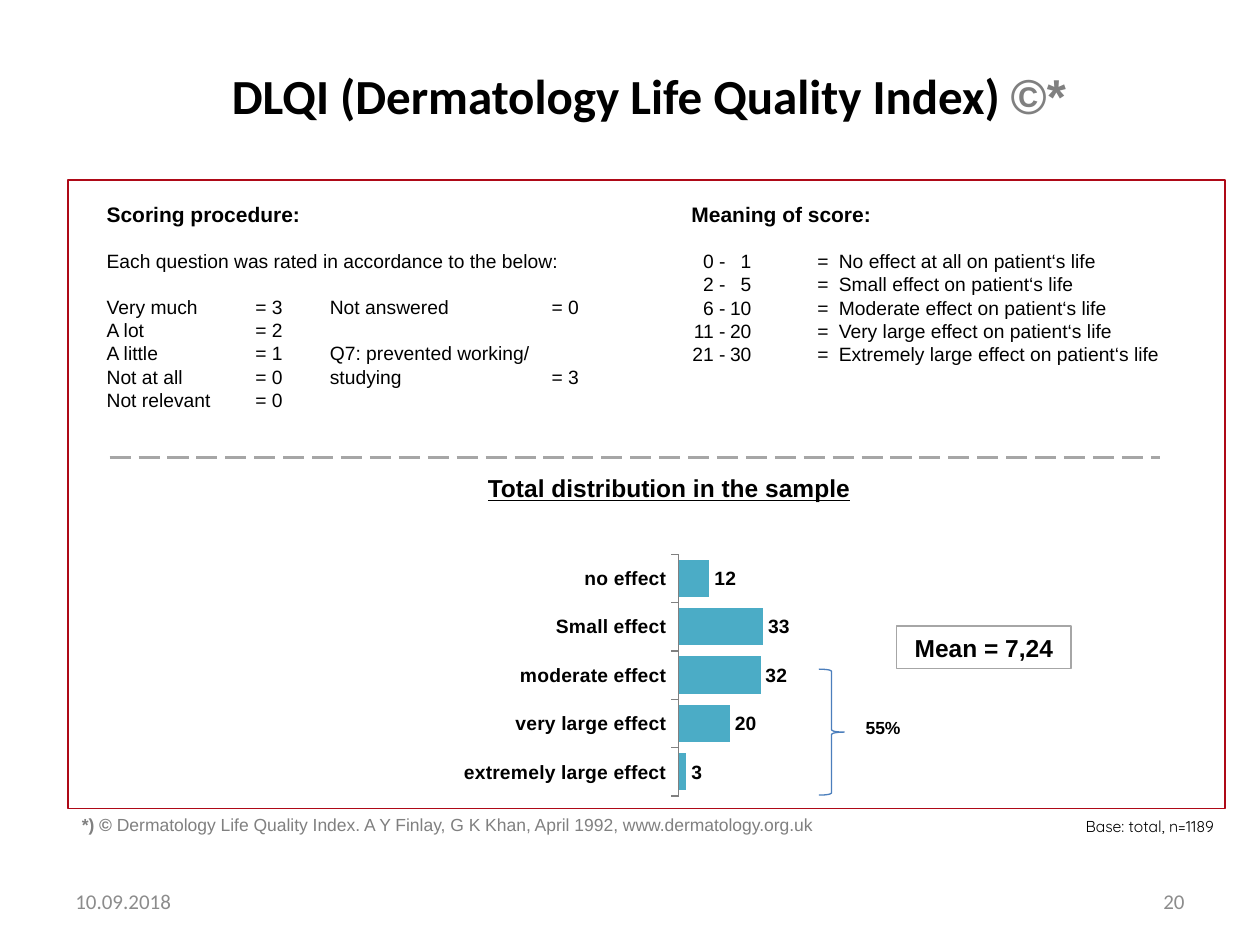
import pptx
import pptx.chart.data
import pptx.dml.color
import pptx.enum.chart
import pptx.enum.dml
import pptx.enum.shapes
import pptx.enum.text
import pptx.oxml
import pptx.oxml.ns
import pptx.util

Cm, Pt = pptx.util.Cm, pptx.util.Pt
Align = pptx.enum.text.PP_ALIGN
Shape = pptx.enum.shapes.MSO_SHAPE
INK = {"black": "000000", "grey": "808080", "pale": "8C8C8C", "rule": "A6A6A6",
       "red": "AE0917", "teal": "4BACC6", "blue": "4B7EBC"}
GAP = 13

RATES = ["Very much\t= 3\tNot answered\t= 0", "A lot\t= 2",
         "A little\t= 1\tQ7: prevented working/",
         "Not at all\t= 0\tstudying\t= 3", "Not relevant\t= 0"]
RATE_TABS = [(3, "l"), (4.5, "l"), (8.97, "l")]
SCORES = [(0, 1, "No effect at all"), (2, 5, "Small effect"),
          (6, 10, "Moderate effect"), (11, 20, "Very large effect"),
          (21, 30, "Extremely large effect")]
SCORE_TABS = [(0.69, "r"), (1.21, "r"), (2.54, "l"), (2.97, "l")]
SHARES = {"no effect": 12, "Small effect": 33, "moderate effect": 32,
          "very large effect": 20, "extremely large effect": 3}


def rgb(name):
    return pptx.dml.color.RGBColor.from_string(INK[name])


def style(font, size, color="black", bold=False, face="Arial"):
    font.name, font.size, font.bold = face, Pt(size), bold
    font.color.rgb = rgb(color)


def add_run(para, text, size, color="black", bold=False, face="Arial"):
    run = para.add_run()
    run.text = text
    style(run.font, size, color, bold, face)
    return run


def add_box(slide, left, top, width, height, align=Align.LEFT, middle=False):
    """Add a wrapping text box and return its text frame."""
    frame = slide.shapes.add_textbox(Cm(left), Cm(top), Cm(width), Cm(height)).text_frame
    frame.word_wrap = True
    if middle:
        frame.vertical_anchor = pptx.enum.text.MSO_ANCHOR.MIDDLE
    frame.paragraphs[0].alignment = align
    return frame


def add_tabs(para, stops):
    props = para._p.get_or_add_pPr()
    tabs = pptx.oxml.ns.qn("a:tabLst")
    tabs = props.makeelement(tabs, {})
    props.append(tabs)
    for pos, side in stops:
        tab = tabs.makeelement(pptx.oxml.ns.qn("a:tab"), {"pos": str(Cm(pos)), "algn": side})
        tabs.append(tab)


def add_rows(frame, rows, stops):
    """Add tabbed rows below a gap."""
    for i, row in enumerate(rows):
        para = frame.add_paragraph()
        if i == 0:
            para.space_before = Pt(GAP)
        add_tabs(para, stops)
        add_run(para, row, 11)


def add_outline(slide, kind, left, top, width, height, color, weight):
    shape = slide.shapes.add_shape(kind, Cm(left), Cm(top), Cm(width), Cm(height))
    shape.shadow.inherit = False
    shape.fill.background()
    shape.line.color.rgb = rgb(color)
    shape.line.width = Pt(weight)
    return shape


def add_rule(slide, left, right, y):
    line = slide.shapes.add_connector(
        pptx.enum.shapes.MSO_CONNECTOR.STRAIGHT, Cm(left), Cm(y), Cm(right), Cm(y))
    line.line.color.rgb = rgb("rule")
    line.line.width = Pt(1.5)
    line.line.dash_style = pptx.enum.dml.MSO_LINE.LONG_DASH
    props = line._element.spPr
    props.append(props.makeelement(pptx.oxml.ns.qn("a:effectLst"), {}))


def add_bars(slide, left, top, width, height):
    data = pptx.chart.data.CategoryChartData()
    data.categories = list(SHARES)
    data.add_series("Series 1", list(SHARES.values()))
    chart = slide.shapes.add_chart(
        pptx.enum.chart.XL_CHART_TYPE.BAR_CLUSTERED,
        Cm(left), Cm(top), Cm(width), Cm(height), data).chart
    chart.has_legend = chart.has_title = False
    style(chart.font, 9, bold=True)

    names = chart.category_axis
    names.reverse_order = True
    names.has_major_gridlines = False
    names.major_tick_mark = pptx.enum.chart.XL_TICK_MARK.OUTSIDE
    names.format.line.color.rgb = rgb("grey")
    style(names.tick_labels.font, 11, bold=True)
    scale = chart.value_axis
    scale.minimum_scale, scale.maximum_scale = 0, 100
    scale.has_major_gridlines = False
    scale.visible = False

    plot = chart.plots[0]
    plot.gap_width = 30
    plot.vary_by_categories = False
    fill = plot.series[0].format.fill
    fill.solid()
    fill.fore_color.rgb = rgb("teal")
    plot.has_data_labels = True
    labels = plot.data_labels
    labels.show_value = True
    labels.position = pptx.enum.chart.XL_LABEL_POSITION.OUTSIDE_END
    style(labels.font, 11, bold=True)
    set_area(chart, x=0.53, y=0.03, w=0.46, h=0.96)


def set_area(chart, **area):
    """Place the inner plot area by fractions of the chart."""
    parts = [("layoutTarget", "inner"), ("xMode", "edge"), ("yMode", "edge"), *area.items()]
    body = "".join(f'<c:{tag} val="{val}"/>' for tag, val in parts)
    layout = pptx.oxml.parse_xml(
        f'<c:layout {pptx.oxml.ns.nsdecls("c")}><c:manualLayout>{body}'
        "</c:manualLayout></c:layout>")
    home = chart._chartSpace.chart.plotArea
    for old in home.findall(pptx.oxml.ns.qn("c:layout")):
        home.remove(old)
    home.insert(0, layout)


def add_text(slide, box, text, size, align=Align.LEFT, middle=False, **look):
    frame = add_box(slide, *box, align, middle)
    return add_run(frame.paragraphs[0], text, size, **look)


def add_guide(slide):
    """Add the scoring rules and the meaning of the scores."""
    left = add_box(slide, 1.9, 3.94, 10.39, 4.52)
    add_run(left.paragraphs[0], "Scoring procedure:", 12, bold=True)
    add_rows(left, ["Each question was rated in accordance to the below:"], [])
    add_rows(left, RATES, RATE_TABS)
    right = add_box(slide, 13.69, 3.94, 10.39, 3.58)
    add_run(right.paragraphs[0], "Meaning of score:", 12, bold=True)
    rows = [f"\t{low} -\t{high}\t=\t{text} on patient‘s life" for low, high, text in SCORES]
    add_rows(right, rows, SCORE_TABS)


def main():
    deck = pptx.Presentation()
    deck.slide_width, deck.slide_height = Cm(25.4), Cm(19.05)
    slide = deck.slides.add_slide(deck.slide_layouts[6])

    title = add_box(slide, 1.65, 0.33, 22.86, 3.18, Align.CENTER, True).paragraphs[0]
    add_run(title, "DLQI (Dermatology Life Quality Index) ", 28, bold=True, face="Calibri")
    add_run(title, "©*", 28, "grey", True)

    add_bars(slide, 7.75, 11.02, 11.2, 5.08)
    add_guide(slide)
    note = add_box(slide, 1.4, 16.28, 16.87, 1.12).paragraphs[0]
    add_run(note, "*) © ", 10, "grey", True)
    add_run(note, "Dermatology Life Quality Index. A Y Finlay, G K Khan, April 1992, "
            "www.dermatology.org.uk", 10, "grey")

    add_outline(slide, Shape.RECTANGLE, 1.37, 3.63, 23.32, 12.67, "red", 1)
    add_rule(slide, 2.21, 23.39, 9.22)
    head = add_text(slide, (8.74, 9.42, 9.5, 0.86), "Total distribution in the sample",
                    14, Align.CENTER, bold=True)
    head.font.underline = True

    mean = add_outline(slide, Shape.RECTANGLE, 18.08, 12.62, 3.51, 0.86, "rule", 0.75)
    para = mean.text_frame.paragraphs[0]
    para.alignment = Align.CENTER
    add_run(para, "Mean = 7,24", 14, bold=True)

    foot = {"color": "pale", "face": "Calibri", "middle": True}
    add_text(slide, (18.21, 17.65, 5.92, 1.02), "20", 12, Align.RIGHT, **foot)
    add_text(slide, (1.27, 17.65, 5.92, 1.02), "10.09.2018", 12, **foot)
    base = add_box(slide, 19.51, 16.31, 5.26, 0.69, Align.RIGHT)
    base.margin_left = base.margin_right = Cm(0.3)
    base.margin_top = base.margin_bottom = Cm(0.15)
    add_run(base.paragraphs[0], "Base: total, n=1189", 9, face="Quicksand")

    add_outline(slide, Shape.RIGHT_BRACE, 16.51, 13.49, 0.51, 2.54, "blue", 0.75)
    add_text(slide, (17.2, 14.33, 1.4, 0.69), "55%", 10, bold=True)
    deck.save("out.pptx")


if __name__ == "__main__":
    main()
